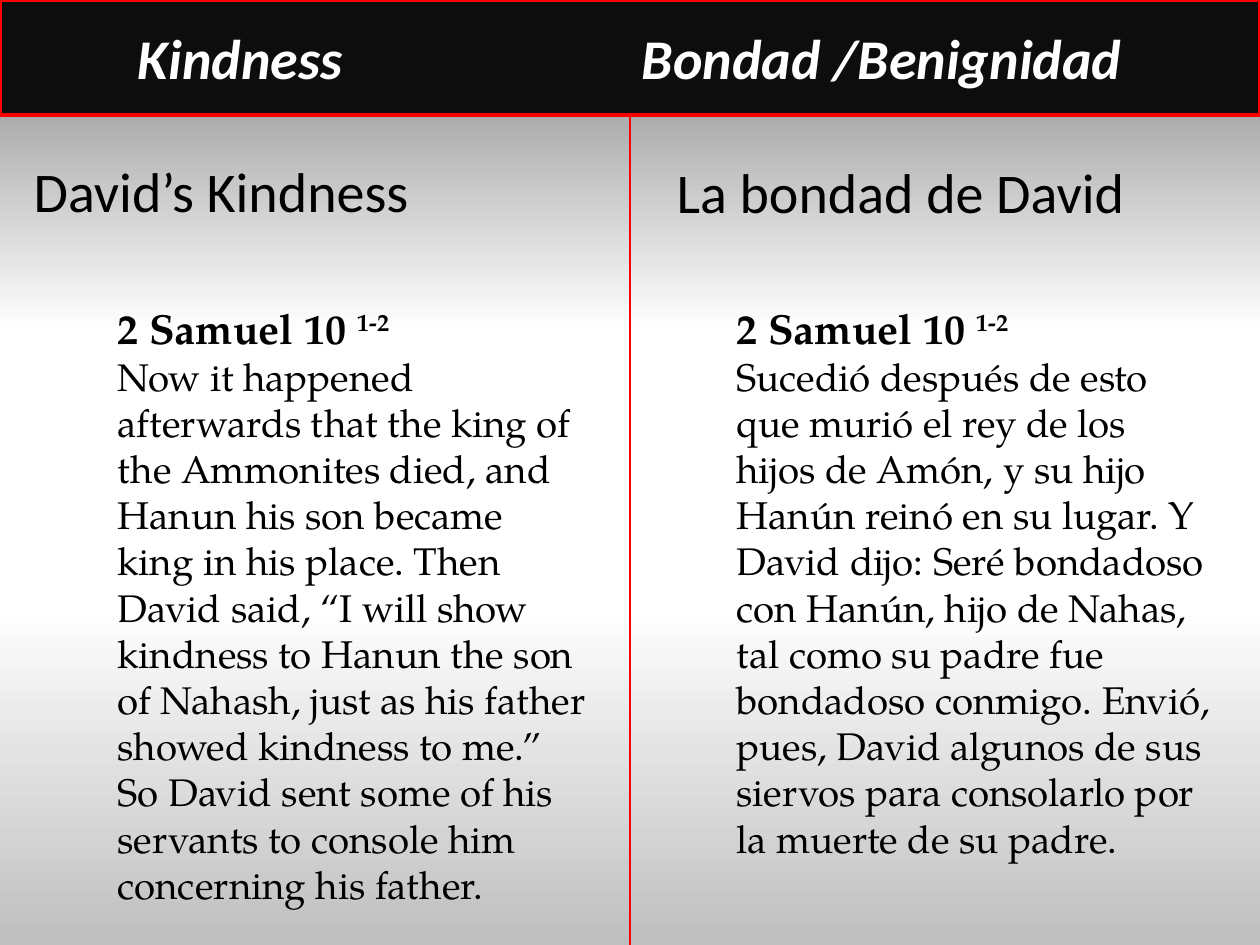
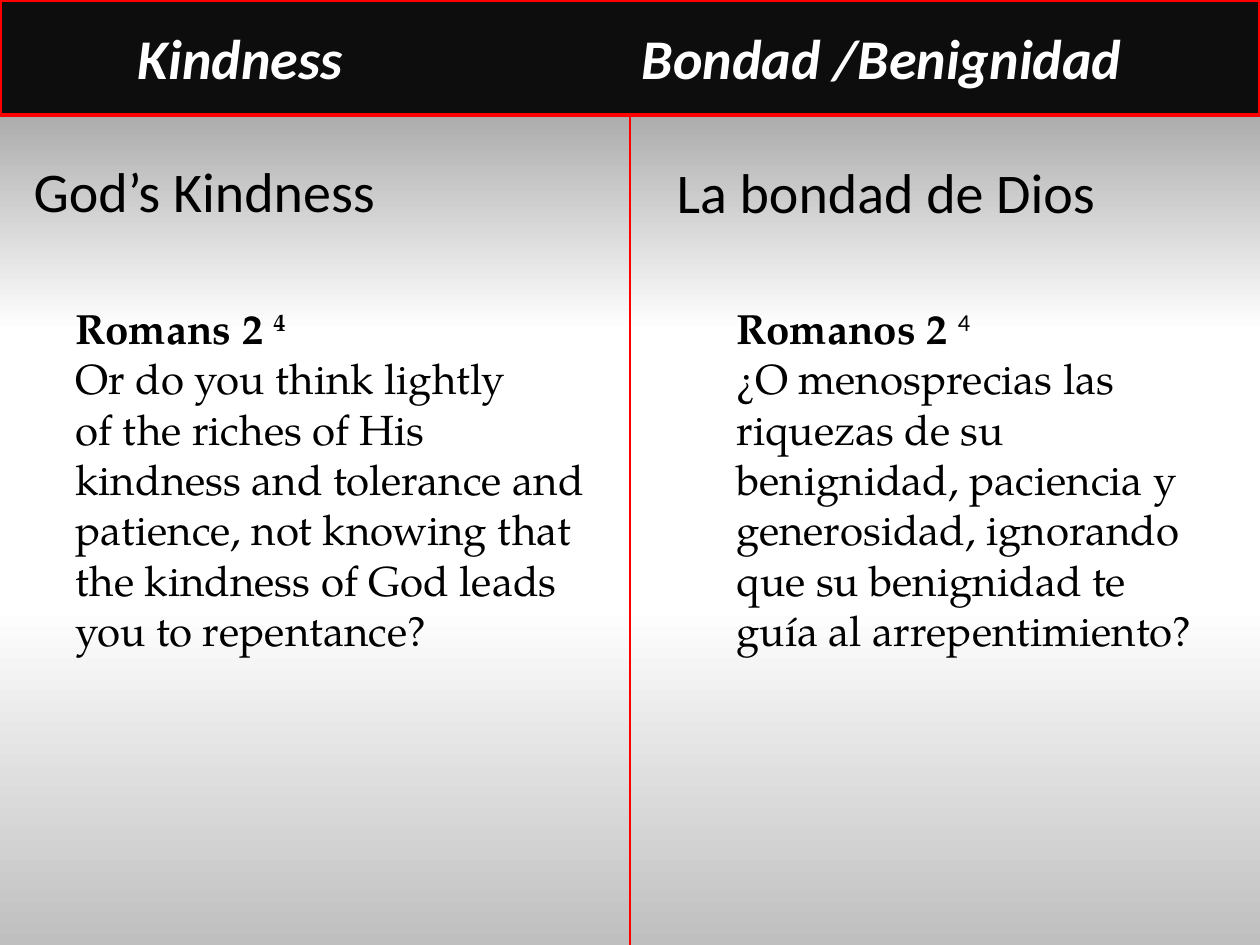
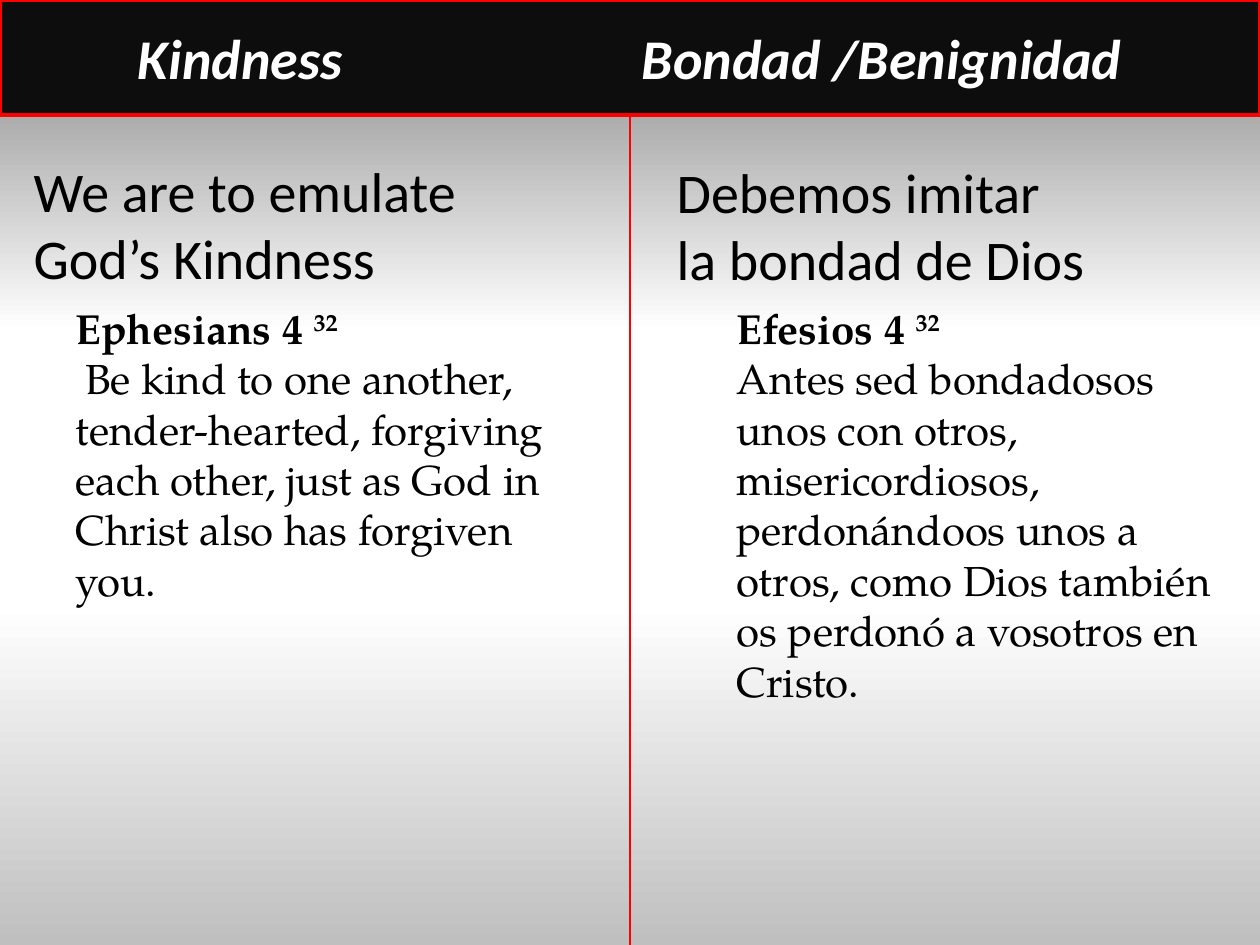
from lxml import etree
from pptx import Presentation
from pptx.dml.color import RGBColor
from pptx.enum.shapes import MSO_CONNECTOR
from pptx.enum.text import MSO_ANCHOR, MSO_AUTO_SIZE, PP_ALIGN
from pptx.oxml.ns import qn
from pptx.util import Pt

PX = 914400 / 126
WIDE, HIGH = 1260, 945

BLACK = RGBColor(0x00, 0x00, 0x00)
WHITE = RGBColor(0xFF, 0xFF, 0xFF)
RED = RGBColor(0xFF, 0x00, 0x00)
COAL = RGBColor(0x0D, 0x0D, 0x0D)
SILVER = RGBColor(0xBF, 0xBF, 0xBF)
GRAY = RGBColor(0x80, 0x80, 0x80)
STOPS = [(0, SILVER), (36, WHITE), (65, WHITE), (100, GRAY)]

SANS, SERIF = "Calibri", "TeX Gyre Pagella"
BAND = "Kindness\t\t\tBondad /Benignidad"
HARD = chr(160)  # no-break space, marked ~ in the passages

# Each column: heading lines, heading box, book, verse, verse font, passage, size, passage box
SLIDES = [
    [
        (["David’s Kindness"], (21, 150, 404, 81), "2 Samuel 10 ", "1-2~", SERIF,
         "Now it happened afterwards that~the king of the Ammonites died, and Hanun his son "
         "became king in his place. Then David said, “I will show kindness to Hanun the son "
         "of~Nahash, just as his father showed kindness to me.” So David sent some of his "
         "servants to console him concerning his father.", 22, (105, 296, 494, 624)),
        (["La bondad de David"], (664, 151, 479, 81), "2 Samuel 10 ", "1-2", SERIF,
         "Sucedió después de esto que murió el rey de los hijos de Amón, y su hijo Hanún "
         "reinó en su lugar. Y David dijo: Seré bondadoso con Hanún, hijo de Nahas, tal como "
         "su padre fue bondadoso conmigo. Envió, pues, David algunos de sus siervos para "
         "consolarlo por la muerte de su padre.", 22, (724, 296, 500, 624)),
    ],
    [
        (["God’s Kindness"], (21, 150, 370, 81), "Romans 2 ", "4", SERIF,
         "Or do you think lightly of~the riches of His kindness and~tolerance and patience, "
         "not knowing that the kindness of God leads you to repentance?",
         24, (63, 296, 535, 369)),
        (["La bondad de Dios"], (664, 151, 449, 81), "Romanos 2 ", "4", SANS,
         "¿O menosprecias las riquezas de su benignidad, paciencia y generosidad, ignorando "
         "que su benignidad te guía al arrepentimiento?", 24, (724, 296, 500, 369)),
    ],
    [
        (["We are to emulate", "God’s Kindness"], (21, 150, 452, 149), "Ephesians 4 ", "32", SERIF,
         "~Be kind to one another, tender-hearted, forgiving each other,~just as God in "
         "Christ also has forgiven you.", 24, (63, 296, 535, 318)),
        (["Debemos imitar la bondad de Dios"], (664, 151, 438, 149), "Efesios 4 ", "32", SERIF,
         "Antes sed bondadosos unos con otros, misericordiosos, perdonándoos unos a otros, "
         "como Dios también os perdonó a vosotros en Cristo.", 24, (724, 296, 500, 420)),
    ],
]


def place(holder, box, anchor=MSO_ANCHOR.TOP):
    """Move a placeholder to a px box and return its text frame."""
    holder.left, holder.top, holder.width, holder.height = [round(n * PX) for n in box]
    frame = holder.text_frame
    frame.word_wrap = True
    frame.auto_size = MSO_AUTO_SIZE.NONE
    frame.vertical_anchor = anchor
    return frame


def style(par, face, size, color=BLACK, bold=False):
    """Format a paragraph with one-inch tabs and no bullet, indent or spacing."""
    font = par.font
    font.name, font.size, font.bold = face, Pt(size), bold
    font.color.rgb = color
    par.space_before = Pt(0)
    props = par._p.get_or_add_pPr()
    for name, value in (("marL", 0), ("indent", 0), ("defTabSz", 914400)):
        props.set(name, str(value))
    props.insert_element_before(etree.Element(qn("a:buNone")), "a:tabLst", "a:defRPr", "a:extLst")


deck = Presentation()
deck.slide_width, deck.slide_height = round(WIDE * PX), round(HIGH * PX)

# Shared gradient background
master = deck.slide_master
fill = master.background.fill
fill.gradient()
fill.gradient_angle = 90
ramp = master.element.find(".//" + qn("a:gsLst"))
for stop in list(ramp):
    ramp.remove(stop)
for spot, color in STOPS:
    stop = etree.SubElement(ramp, qn("a:gs"), pos=str(spot * 1000))
    etree.SubElement(stop, qn("a:srgbClr"), val=str(color))

for columns in SLIDES:
    slide = deck.slides.add_slide(deck.slide_layouts.get_by_name("Comparison"))
    title, *holders = slide.placeholders

    # Title band
    frame = place(title, (0, 0, WIDE, 115), MSO_ANCHOR.MIDDLE)
    title.fill.solid()
    title.fill.fore_color.rgb = COAL
    title.line.color.rgb = RED
    title.line.width = Pt(2)
    par = frame.paragraphs[0]
    par.text = BAND
    par.alignment = PP_ALIGN.CENTER
    style(par, SANS, 32, WHITE, True)
    par.font.italic = True

    # English and Spanish columns
    for column, head, body in zip(columns, holders[::2], holders[1::2]):
        lines, spot, book, verse, face, passage, size, box = column
        frame = place(head, spot)
        frame.text = "\n".join(lines)
        for par in frame.paragraphs:
            style(par, SANS, 32)

        frame = place(body, box)
        par = frame.paragraphs[0]
        style(par, SERIF, 24, bold=True)
        par.add_run().text = book
        run = par.add_run()
        run.text = verse.replace("~", HARD)
        run.font._element.set("baseline", "30000")
        if face != SERIF:
            run.font.name, run.font.bold = face, False

        par = frame.add_paragraph()
        style(par, SERIF, size)
        if passage.startswith("~"):
            run = par.add_run()
            run.text = HARD
            run.font.name, run.font.bold = SANS, True
        par.add_run().text = passage.lstrip("~").replace("~", HARD)

    # Divider hanging from the band
    mid = round(WIDE / 2 * PX)
    rule = slide.shapes.add_connector(MSO_CONNECTOR.STRAIGHT, mid, title.height, mid, deck.slide_height)
    rule.begin_connect(title, 2)
    rule.line.color.rgb = RED
    rule.line.width = Pt(0.75)
    etree.SubElement(rule._element.spPr, qn("a:effectLst"))

deck.save("out.pptx")
